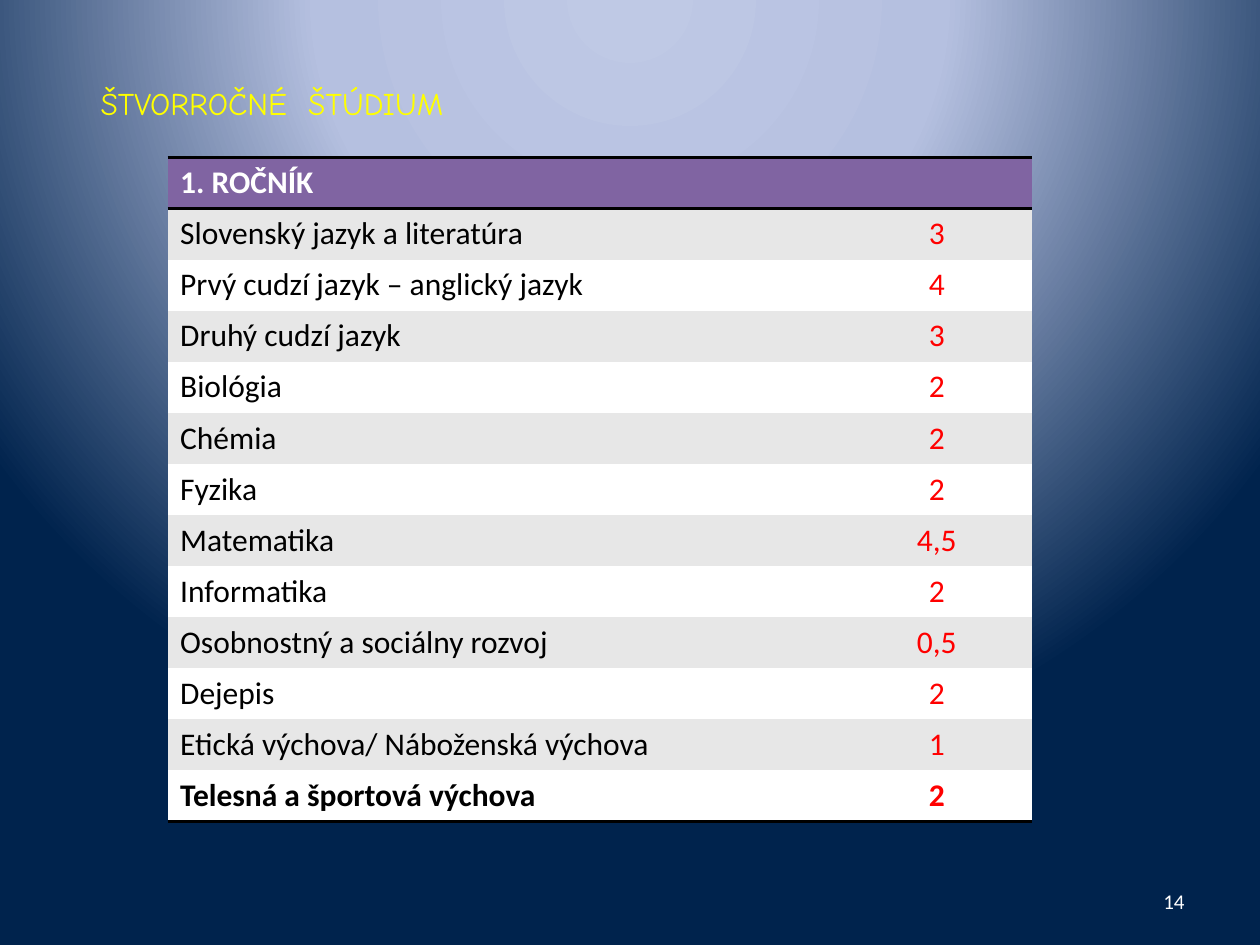
import pptx
import pptx.util
from lxml import etree
from pptx.dml.color import RGBColor
from pptx.enum.text import MSO_ANCHOR, PP_ALIGN
from pptx.oxml.ns import qn
from pptx.util import Inches

WHITE = RGBColor(0xFF, 0xFF, 0xFF)
BLACK = RGBColor(0x00, 0x00, 0x00)
RED = RGBColor(0xFF, 0x00, 0x00)
YELLOW = RGBColor(0xFF, 0xFF, 0x00)
PURPLE = RGBColor(0x80, 0x64, 0xA2)
GREY = RGBColor(0xE7, 0xE7, 0xE7)
PALE_BLUE = RGBColor(0xBF, 0xC9, 0xE5)
MID_BLUE = RGBColor(0xB5, 0xC0, 0xE0)
NAVY = RGBColor(0x00, 0x23, 0x4D)

NO_STYLE = "{2D5ABB26-0587-4C30-8999-92F81FD0307C}"

SUBJECTS = [
    ("Slovenský jazyk a literatúra", "3"),
    ("Prvý cudzí jazyk – anglický jazyk", "4"),
    ("Druhý cudzí jazyk", "3"),
    ("Biológia", "2"),
    ("Chémia", "2"),
    ("Fyzika", "2"),
    ("Matematika", "4,5"),
    ("Informatika", "2"),
    ("Osobnostný a sociálny rozvoj", "0,5"),
    ("Dejepis", "2"),
    ("Etická výchova/ Náboženská výchova", "1"),
    ("Telesná a športová výchova", "2"),
]


def add_element(parent, tag, **attributes):
    return etree.SubElement(parent, qn(tag), attributes)


class SlideBuilder:
    body_font = "Calibri"
    title_font = "Comic Neue"
    text_size = 18
    rule_width = 2

    def __init__(self, page):
        self.page = page

    def background(self, stops):
        """Radial gradient centred above the top edge."""
        self.page.background.fill.gradient()
        gradient = next(self.page.element.iter(qn("a:gradFill")))
        for child in list(gradient):
            gradient.remove(child)
        stop_list = add_element(gradient, "a:gsLst")
        for percent, color in stops:
            stop = add_element(stop_list, "a:gs", pos=str(percent * 1000))
            add_element(stop, "a:srgbClr", val=str(color))
        circle = add_element(gradient, "a:path", path="circle")
        add_element(circle, "a:fillToRect", l="50000", t="-80000", r="50000", b="180000")

    def fill_para(self, para, text, color, font=None, size=None, bold=False,
                  align=PP_ALIGN.LEFT):
        para.alignment = align
        para.font.name = font or self.body_font
        para.font.size = pptx.util.Pt(size or self.text_size)
        para.font.bold = bold
        para.font.color.rgb = color
        if text:
            para.add_run().text = text

    def text(self, left, top, width, height, text, color, anchor=MSO_ANCHOR.TOP, **style):
        box = self.page.shapes.add_textbox(
            Inches(left), Inches(top), Inches(width), Inches(height))
        box.text_frame.word_wrap = True
        box.text_frame.vertical_anchor = anchor
        self.fill_para(box.text_frame.paragraphs[0], text, color, **style)

    def rule(self, cell, *sides):
        properties = cell._tc.get_or_add_tcPr()
        for index, side in enumerate(sides):
            line = etree.Element(qn(side), w=str(int(pptx.util.Pt(self.rule_width))))
            add_element(add_element(line, "a:solidFill"), "a:srgbClr", val=str(BLACK))
            properties.insert(index, line)

    def table(self, left, top, widths, height, heading, rows):
        frame = self.page.shapes.add_table(
            len(rows) + 1, len(widths), Inches(left), Inches(top),
            Inches(sum(widths)), Inches(height))
        table = frame.table
        table.first_row = table.horz_banding = False
        table._tbl.tblPr.find(qn("a:tableStyleId")).text = NO_STYLE
        for column, width in zip(table.columns, widths):
            column.width = Inches(width)

        for index, row in enumerate([(heading, "")] + rows):
            is_heading, is_last = index == 0, index == len(rows)
            for position, text in enumerate(row):
                cell = table.cell(index, position)
                cell.fill.solid()
                cell.fill.fore_color.rgb = (
                    PURPLE if is_heading else GREY if index % 2 else WHITE)
                color = WHITE if is_heading else (BLACK, RED)[position]
                self.fill_para(cell.text_frame.paragraphs[0], text, color,
                               bold=is_heading or is_last,
                               align=(PP_ALIGN.LEFT, PP_ALIGN.CENTER)[position])
                if is_heading:
                    self.rule(cell, "a:lnT", "a:lnB")
                elif is_last:
                    self.rule(cell, "a:lnB")


def main():
    deck = pptx.Presentation()
    deck.slide_width, deck.slide_height = Inches(10), Inches(7.5)
    slide = SlideBuilder(deck.slides.add_slide(deck.slide_layouts[6]))

    # Background
    slide.background([(0, PALE_BLUE), (40, MID_BLUE), (100, NAVY)])

    # Slide number
    slide.text(7.17, 6.95, 2.33, 0.4, "14", WHITE, anchor=MSO_ANCHOR.MIDDLE,
               size=12, align=PP_ALIGN.RIGHT)

    # Weekly lessons per subject
    slide.table(1.33, 1.25, [5.35, 1.51], 5.27, "1. ROČNÍK", SUBJECTS)

    # Title
    slide.text(0.7, 0.62, 8.75, 1.33, "ŠTVORROČNÉ  ŠTÚDIUM", YELLOW,
               font=slide.title_font)

    deck.save("out.pptx")


if __name__ == "__main__":
    main()
